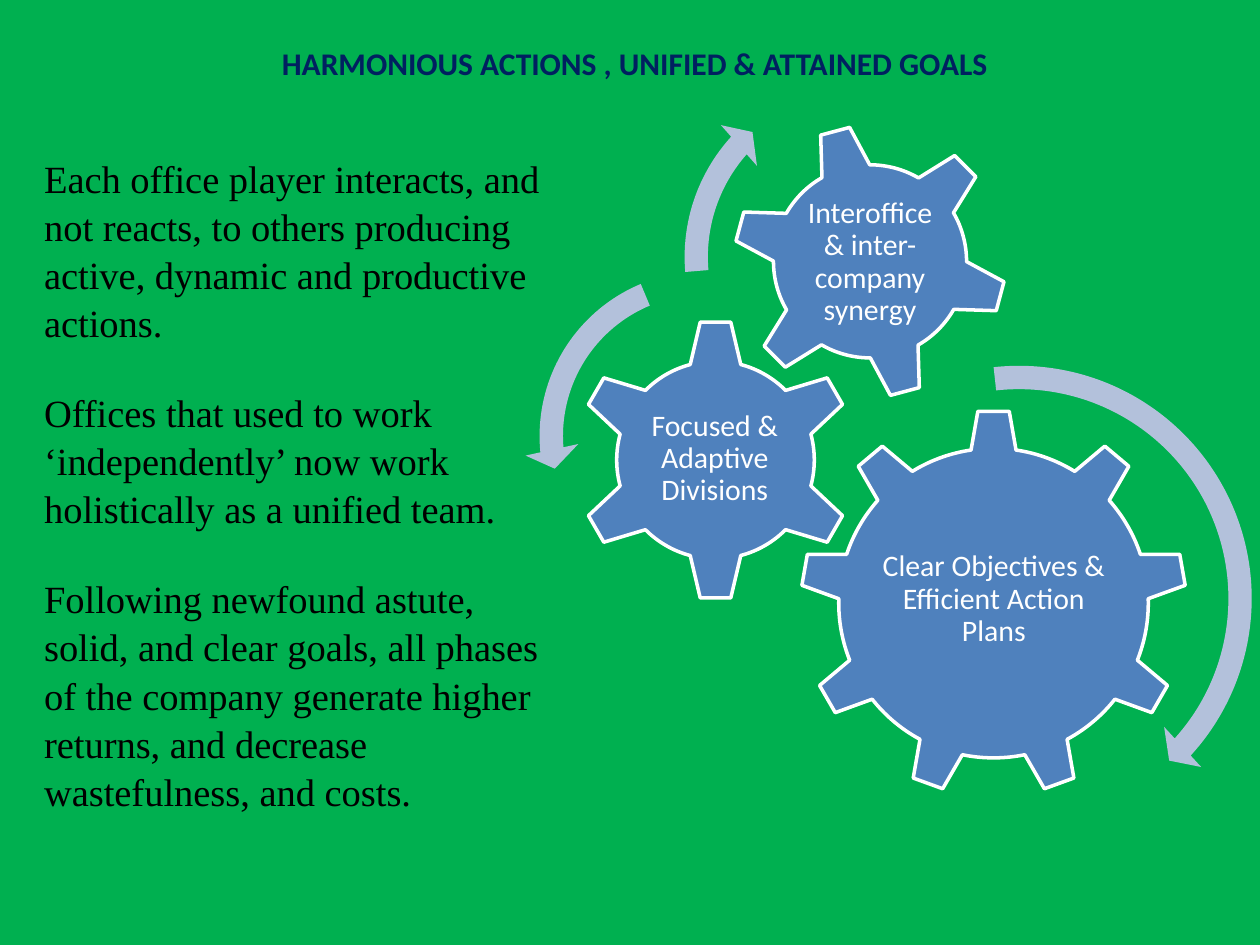
from pptx import Presentation
from pptx.dml.color import RGBColor
from pptx.enum.shapes import MSO_SHAPE as Geo
from pptx.enum.text import MSO_ANCHOR as Anchor, PP_ALIGN as Align
from pptx.util import Cm, Pt

GREEN, NAVY, BLACK = "00B050", "002060", "000000"
BLUE, PALE, WHITE = "4F81BD", "B3C1DB", "FFFFFF"
SANS, SERIF = "Calibri", "Times New Roman"


def paint(fmt, color):
    """Give a fill or a font its colour from a hex string."""
    if hasattr(fmt, "solid"):
        fmt.solid()
        fmt.fore_color.rgb = RGBColor.from_string(color)
    else:
        fmt.color.rgb = RGBColor.from_string(color)


class Deck:
    def __init__(self):
        self.prs = Presentation()
        self.prs.slide_width, self.prs.slide_height = Cm(25.4), Cm(19.05)

    def page(self, color):
        self.slide = self.prs.slides.add_slide(self.prs.slide_layouts[6])
        self.shapes = self.slide.shapes
        paint(self.slide.background.fill, color)

    def group(self):
        self.shapes = self.slide.shapes.add_group_shape().shapes

    def text(self, box, paras, size, font, color, bold=False, align=Align.LEFT,
             lead=1.0, gap=0, inset=None, anchor=Anchor.TOP):
        frame = self.shapes.add_textbox(*map(Cm, box)).text_frame
        frame.word_wrap = True
        frame.vertical_anchor = anchor
        if inset is not None:
            frame.margin_left = frame.margin_right = Cm(inset)
            frame.margin_top = frame.margin_bottom = Cm(inset)
        frame.text = "\n".join(paras)
        for i, para in enumerate(frame.paragraphs):
            para.alignment = align
            para.line_spacing = lead
            para.space_before = Pt(gap if i else 0)
            for run in para.runs:
                run.font.size, run.font.name = Pt(size), font
                run.font.bold = bold
                paint(run.font, color)

    def solid(self, geo, left, top, side, color):
        shape = self.shapes.add_shape(geo, Cm(left), Cm(top), Cm(side), Cm(side))
        shape.shadow.inherit = False
        paint(shape.fill, color)
        return shape

    def gear(self, geo, left, top, side, label, box, turn=0):
        shape = self.solid(geo, left, top, side, BLUE)
        shape.rotation = turn
        paint(shape.line.fill, WHITE)
        shape.line.width = Pt(2)
        self.text(box, [label], 17, SANS, WHITE, align=Align.CENTER,
                  lead=0.9, inset=0.05, anchor=Anchor.MIDDLE)

    def arrow(self, geo, left, top, side, thick, tip, end, start, head):
        """Thickness and head are shares of the side; angles are in degrees."""
        shape = self.solid(geo, left, top, side, PALE)
        shape.line.fill.background()
        turns = [angle * 0.6 for angle in (tip, end, start)]
        for i, value in enumerate([thick, *turns, head]):
            shape.adjustments[i] = value


def main():
    deck = Deck()
    deck.page(GREEN)

    # Title
    deck.text((1.27, 0.76, 23.06, 1.14),
              ["HARMONIOUS ACTIONS , UNIFIED & ATTAINED GOALS"],
              18, SANS, NAVY, bold=True, align=Align.CENTER)

    # Body
    deck.text((0.64, 2.97, 11, 16.08), [
        "Each office player interacts, and not reacts, to others producing "
        "active, dynamic and productive actions.",
        "Offices that used to work ‘independently’ now work holistically "
        "as a unified team.",
        "Following newfound astute, solid, and clear goals, all phases of the "
        "company generate higher returns, and decrease wastefulness, and costs.",
    ], 22, SERIF, BLACK, lead=1.04, gap=24)

    # Gears with their labels
    deck.group()
    deck.gear(Geo.GEAR_9, 16.13, 8.26, 7.8,
              "Clear Objectives & Efficient Action Plans",
              (17.7, 10.08, 4.67, 4.01))
    deck.gear(Geo.GEAR_6, 11.58, 6.43, 5.69, "Focused & Adaptive Divisions",
              (13, 7.85, 2.82, 2.79))
    deck.gear(Geo.GEAR_6, 14.76, 2.49, 5.56,
              "Interoffice & inter-company synergy",
              (15.98, 3.73, 3.12, 3.12), turn=345)

    # Arrows that show how the gears turn
    right, left = Geo.CIRCULAR_ARROW, Geo.LEFT_CIRCULAR_ARROW
    deck.arrow(right, 15.54, 7.06, 10.01, 0.047, 4.98, 42.24, 263.71, 0.055)
    deck.arrow(left, 10.57, 5.16, 7.26, 0.065, 7.17, 174.82, 247.3, 0.075)
    deck.arrow(right, 13.49, 1.27, 7.82, 0.06, 6.57, 221.9, 175.14, 0.07)

    deck.prs.save("out.pptx")


if __name__ == "__main__":
    main()
